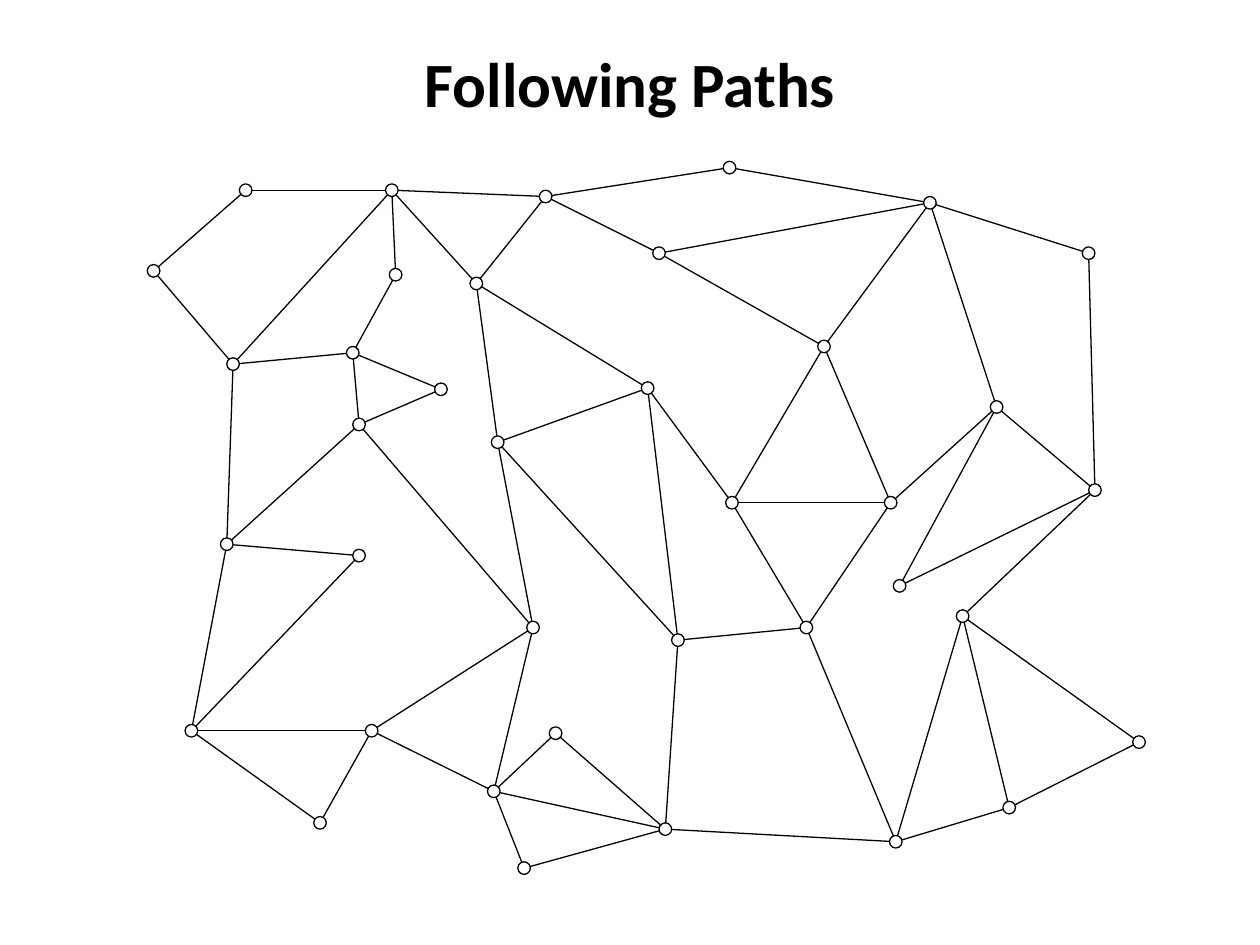
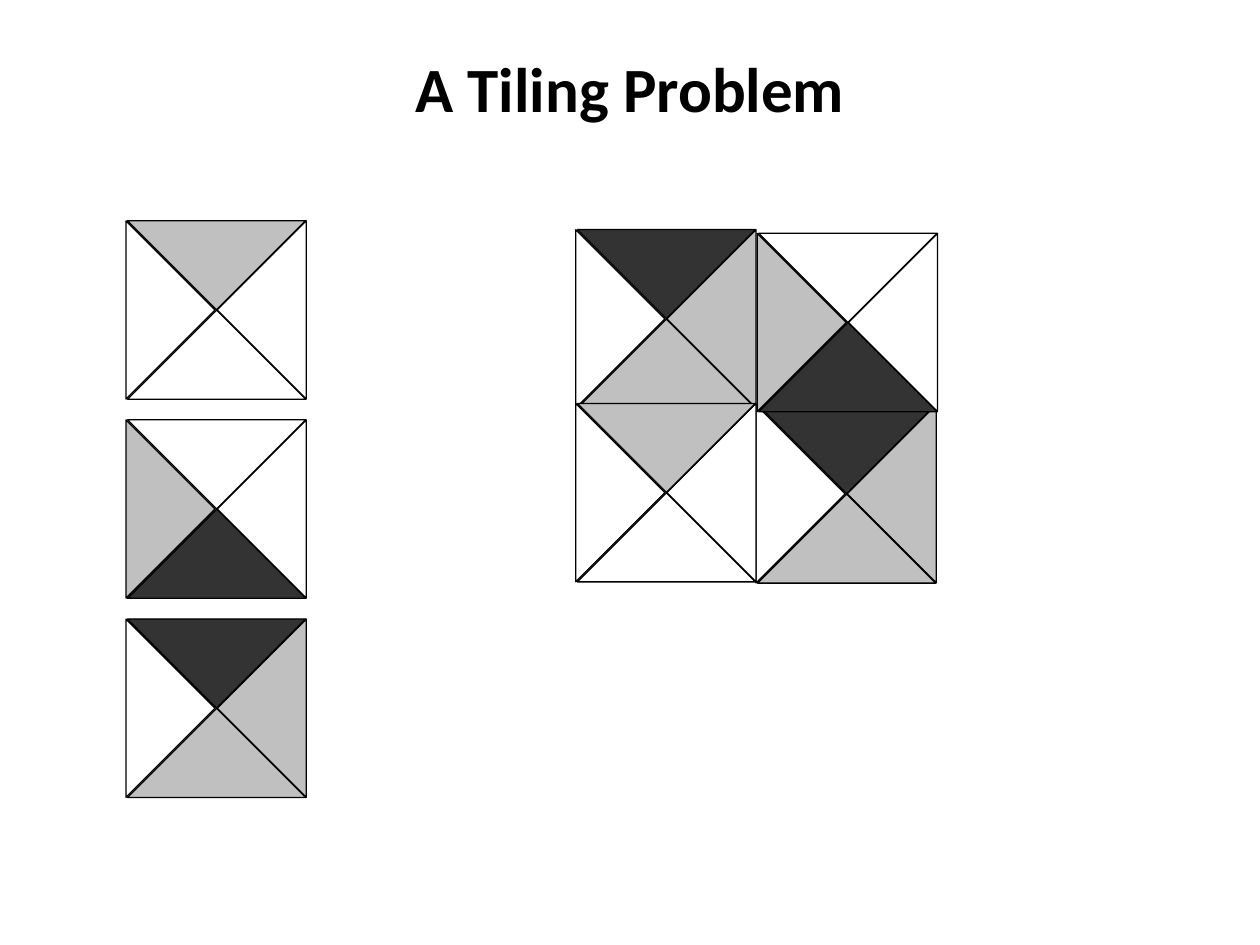
from dataclasses import dataclass
from math import hypot

from lxml.etree import SubElement
from pptx import Presentation
from pptx.dml.color import RGBColor
from pptx.enum.shapes import MSO_CONNECTOR, MSO_SHAPE
from pptx.enum.text import MSO_ANCHOR, PP_ALIGN
from pptx.oxml.ns import qn
from pptx.util import Pt


@dataclass(frozen=True)
class Theme:
    ink: RGBColor = RGBColor(0, 0, 0)
    white: RGBColor = RGBColor(255, 255, 255)
    grey: RGBColor = RGBColor(192, 192, 192)
    dark: RGBColor = RGBColor(51, 51, 51)
    font: str = "Calibri"
    head: float = 36
    line: float = 0.75
    dot: float = 7.2


def apply(target, values):
    for key, value in values.items():
        setattr(target, key, value)


class Deck:
    def __init__(self, theme):
        self.theme = theme
        self.show = Presentation()
        apply(self.show, {"slide_width": Pt(720), "slide_height": Pt(540)})
        self.slide = None

    def page(self, text, height):
        theme = self.theme
        self.slide = self.show.slides.add_slide(self.show.slide_layouts[5])
        title = self.slide.shapes.title
        apply(title, {"left": Pt(36), "top": Pt(21.6),
                      "width": Pt(648), "height": Pt(height)})
        title.text_frame.text = text
        title.text_frame.vertical_anchor = MSO_ANCHOR.MIDDLE
        para = title.text_frame.paragraphs[0]
        para.alignment = PP_ALIGN.CENTER
        font = para.runs[0].font
        apply(font, {"name": theme.font, "size": Pt(theme.head), "bold": True})
        font.color.rgb = theme.ink

    def stroke(self, item):
        item.line.color.rgb = self.theme.ink
        item.line.width = Pt(self.theme.line)

    def shape(self, home, kind, left, top, size, fill=None, turn=0):
        item = home.shapes.add_shape(kind, Pt(left), Pt(top), Pt(size), Pt(size))
        apply(item, {"rotation": turn})
        item.shadow.inherit = False
        if fill is None:
            item.fill.background()
        else:
            item.fill.solid()
            item.fill.fore_color.rgb = fill
        self.stroke(item)

    def node(self, x, y):
        size = self.theme.dot
        self.shape(self.slide, MSO_SHAPE.OVAL, x - size / 2, y - size / 2, size)

    def edge(self, start, end):
        (x1, y1), (x2, y2) = start, end
        trim = self.theme.dot / 2 / hypot(x2 - x1, y2 - y1)
        dx, dy = (x2 - x1) * trim, (y2 - y1) * trim
        line = self.slide.shapes.add_connector(
            MSO_CONNECTOR.STRAIGHT, Pt(x1 + dx), Pt(y1 + dy), Pt(x2 - dx), Pt(y2 - dy))
        self.stroke(line)
        SubElement(line._element.spPr, qn("a:effectLst"))

    def tile(self, left, top, fills):
        group = self.slide.shapes.add_group_shape()
        for (dx, dy, turn), fill in zip(PARTS, fills):
            self.shape(group, MSO_SHAPE.RIGHT_TRIANGLE, left + dx, top + dy,
                       72, getattr(self.theme, fill), turn)


NODES = [
    (140.4, 108.7), (223.9, 108.7), (87.8, 154.8), (311.8, 112.3),
    (133.2, 208.1), (272.2, 162), (201.6, 201.6), (205.2, 317.5),
    (370.1, 221.8), (470.9, 198), (205.2, 242.6), (109.4, 417.6),
    (284.4, 252.7), (531.4, 115.9), (304.6, 358.6), (376.6, 144.7),
    (625.7, 280.1), (650.9, 424.1), (282.2, 452.2), (380.2, 473.8),
    (129.6, 311), (622.1, 144.7), (550.1, 352.1), (212.4, 417.6),
    (569.5, 232.6), (418.3, 287.3), (460.8, 358.6), (182.9, 470.2),
    (509, 287.3), (387.4, 365.8), (576.7, 461.5), (511.9, 481),
    (252, 222.5), (299.5, 496.1), (226.1, 157), (317.5, 419),
    (514.1, 334.8), (416.9, 95.8),
]
LINKS = {
    0: [1, 2], 1: [3, 4, 5, 34], 2: [4], 3: [5, 15, 37], 4: [6, 20],
    5: [8, 12], 6: [10, 32, 34], 7: [11, 20], 8: [12, 25, 29],
    9: [13, 15, 25, 28], 10: [14, 20, 32], 11: [20, 23, 27],
    12: [14, 29], 13: [15, 21, 24, 37], 14: [18, 23],
    16: [21, 22, 24, 36], 17: [22, 30], 18: [19, 23, 33, 35],
    19: [29, 31, 33, 35], 22: [30, 31], 23: [27], 24: [28, 36],
    25: [26, 28], 26: [28, 29, 31], 30: [31],
}

PARTS = [(0, 0, 225), (103, 0, 45), (51.8, 51, 135), (51.8, -51, 315)]
CAP = ("white", "white", "white", "grey")
SIDE = ("grey", "white", "dark", "white")
FULL = ("white", "grey", "grey", "dark")
BOARD = [(396, 246.2, FULL), (293, 146.2, FULL),
         (396.7, 148.3, SIDE), (293, 245.5, CAP)]


def main():
    deck = Deck(Theme())

    deck.page("Following Paths", 51)
    for spot in NODES:
        deck.node(*spot)
    for start, ends in LINKS.items():
        for end in ends:
            deck.edge(NODES[start], NODES[end])

    deck.page("A Tiling Problem", 56)
    for cell in BOARD:
        deck.tile(*cell)
    for row, fills in enumerate((CAP, SIDE, FULL)):
        deck.tile(36, 141.1 + row * 113.8, fills)

    deck.show.save("out.pptx")


if __name__ == "__main__":
    main()
